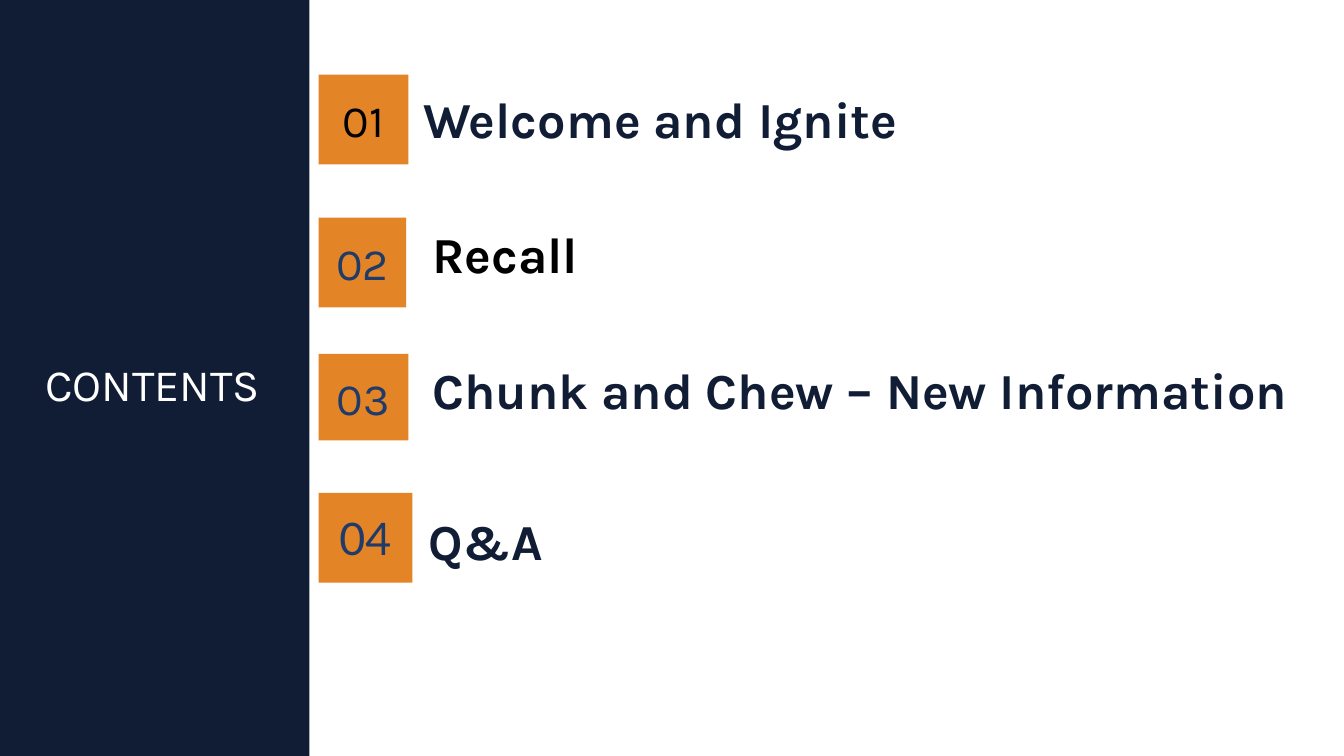
import pptx
import pptx.util
import pptx.dml.color
import pptx.enum.shapes
import pptx.enum.text
from typing import NamedTuple

Inches = pptx.util.Inches
Align = pptx.enum.text.PP_ALIGN
NAVY = "101D35"
BLUE = "203B6A"
ORANGE = "E38526"
BLACK = "000000"
WHITE = "FFFFFF"


class Box(NamedTuple):
    left: float
    top: float
    width: float
    height: float


class Topic(NamedTuple):
    label: str
    tile: Box
    area: Box
    digit: str = BLUE
    color: str = NAVY
    face: str = "Karla"


TOPICS = [
    Topic("Welcome and Ignite", Box(3.16, 0.74, 0.89, 0.89),
          Box(4.1, 0.73, 8.73, 0.89), digit=BLACK),
    Topic("Recall", Box(3.16, 2.16, 0.87, 0.89),
          Box(4.19, 2.07, 8.6, 0.89), color=BLACK),
    Topic("Chunk and Chew – New Information", Box(3.16, 3.51, 0.89, 0.86),
          Box(4.19, 3.43, 8.73, 0.86)),
    Topic("Q&A", Box(3.16, 4.89, 0.93, 0.89),
          Box(4.15, 4.95, 9.18, 0.83), face="Lato"),
]


def paint(target, color: str) -> None:
    target.rgb = pptx.dml.color.RGBColor.from_string(color)


def write(shape, text: str, size: int, color: str, align: Align,
          face: str = "Karla", bold: bool = False) -> None:
    frame = shape.text_frame
    frame.word_wrap = True
    frame.auto_size = pptx.enum.text.MSO_AUTO_SIZE.NONE
    frame.vertical_anchor = pptx.enum.text.MSO_ANCHOR.MIDDLE
    line = frame.paragraphs[0]
    line.alignment = align
    run = line.add_run()
    run.text = text
    run.font.name = face
    run.font.size = pptx.util.Pt(size)
    run.font.bold = bold
    paint(run.font.color, color)


def block(slide, box: Box, color: str):
    shape = slide.shapes.add_shape(
        pptx.enum.shapes.MSO_SHAPE.RECTANGLE, *map(Inches, box))
    shape.shadow.inherit = False
    shape.fill.solid()
    paint(shape.fill.fore_color, color)
    shape.line.fill.background()
    return shape


def head(slide) -> None:
    title = slide.shapes.title
    title.left, title.top, title.width, title.height = map(
        Inches, Box(0, 3.49, 3.03, 0.64))
    write(title, "CONTENTS", 32, WHITE, Align.CENTER)
    panel = block(slide, Box(0, 0, 3.07, 7.5), NAVY)
    title.element.addprevious(panel.element)


def entry(slide, rank: int, topic: Topic) -> None:
    tile = block(slide, topic.tile, ORANGE)
    write(tile, f"{rank:02}", 32, topic.digit, Align.CENTER, topic.face)
    label = slide.shapes.add_textbox(*map(Inches, topic.area))
    write(label, topic.label, 36, topic.color, Align.LEFT, bold=True)


def main() -> None:
    deck = pptx.Presentation()
    deck.slide_width = Inches(13.33)
    deck.slide_height = Inches(7.5)
    slide = deck.slides.add_slide(deck.slide_layouts[5])
    head(slide)
    for rank, topic in enumerate(TOPICS, 1):
        entry(slide, rank, topic)
    deck.save("out.pptx")


if __name__ == "__main__":
    main()
